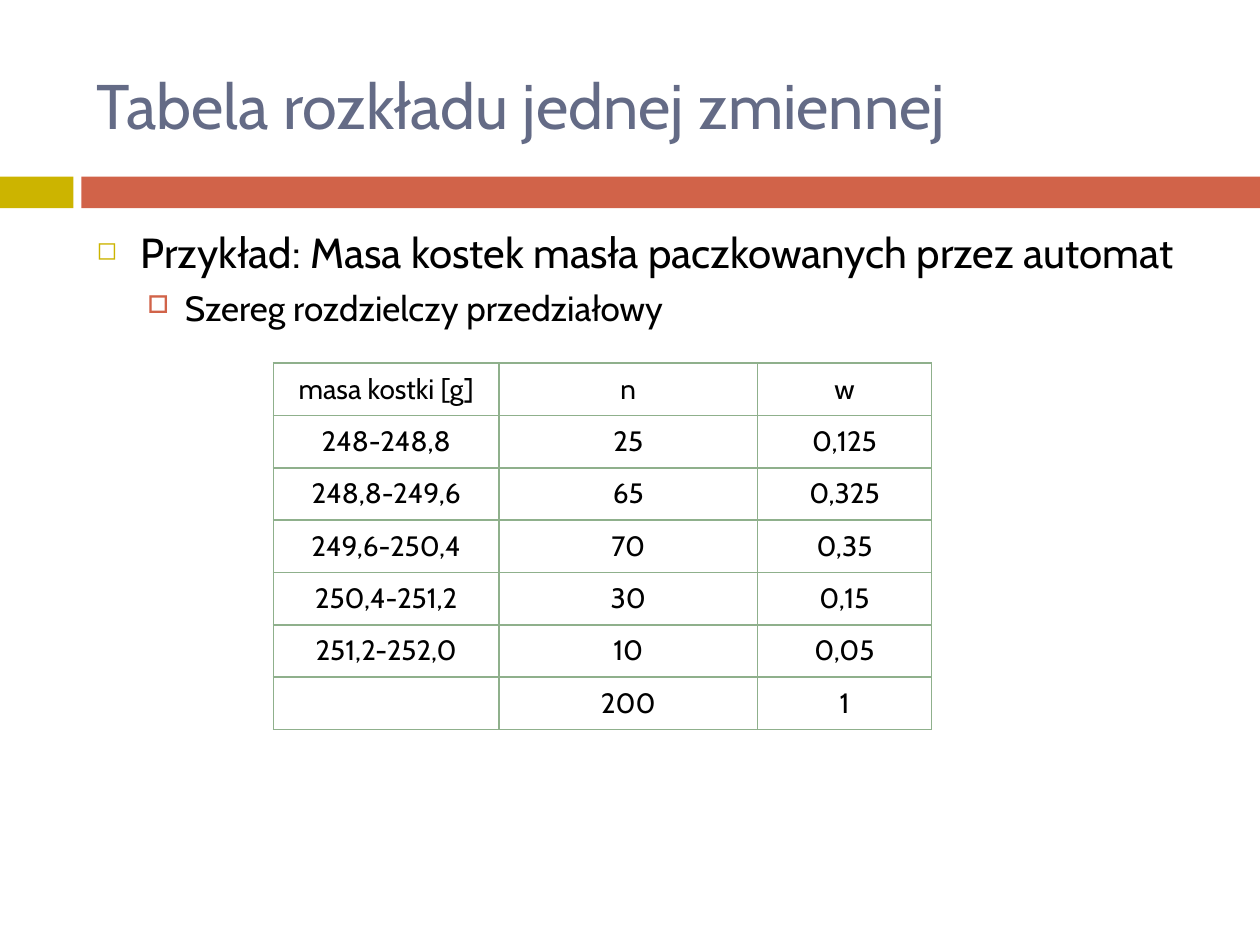
from dataclasses import dataclass

from lxml.etree import SubElement
from pptx import Presentation
from pptx.dml.color import RGBColor
from pptx.enum.shapes import MSO_SHAPE
from pptx.enum.text import MSO_ANCHOR, PP_ALIGN
from pptx.oxml.ns import qn
from pptx.util import Cm, Pt


@dataclass(frozen=True)
class Theme:
    font: str = "Cabin"
    title: str = "646B86"
    text: str = "000000"
    gold: str = "CCB400"
    red: str = "D16349"
    grid: str = "8FB08C"
    title_size: int = 36
    body_size: int = 24
    sub_size: int = 20
    cell_size: int = 16
    grid_width: int = 1


THEME = Theme()

TITLE = "Tabela rozkładu jednej zmiennej"
# text, size, bullet, bullet colour, bullet percent, left margin, hanging, space before
POINTS = [
    ("Przykład: Masa kostek masła paczkowanych przez automat",
     THEME.body_size, "◻", THEME.gold, 60, 0.89, 0.89, 7),
    ("Szereg rozdzielczy przedziałowy",
     THEME.sub_size, "□", THEME.red, 70, 1.78, 0.76, 5.5),
]
DISTRIBUTION = [
    ("masa kostki [g]", "n", "w"),
    ("248-248,8", "25", "0,125"),
    ("248,8-249,6", "65", "0,325"),
    ("249,6-250,4", "70", "0,35"),
    ("250,4-251,2", "30", "0,15"),
    ("251,2-252,0", "10", "0,05"),
    ("", "200", "1"),
]
COLUMN_WIDTHS = (4.55, 5.21, 3.51)


def style(paragraph, size, color):
    font = paragraph.font
    font.name, font.size = THEME.font, Pt(size)
    font.color.rgb = RGBColor.from_string(color)


def add_band(slide, left, top, width, height):
    """Gold block and red bar, parted by a narrow gap."""
    block, gap = 1.48, 0.16
    bar = block + gap
    for offset, length, color in ((0, block, THEME.gold), (bar, width - bar, THEME.red)):
        piece = slide.shapes.add_shape(
            MSO_SHAPE.RECTANGLE, Cm(left + offset), Cm(top), Cm(length), Cm(height))
        piece.shadow.inherit = False
        piece.fill.solid()
        piece.fill.fore_color.rgb = RGBColor.from_string(color)
        piece.line.fill.background()


def add_text_frame(slide, left, top, width, height):
    frame = slide.shapes.add_textbox(Cm(left), Cm(top), Cm(width), Cm(height)).text_frame
    frame.word_wrap = True
    return frame


def add_title(slide, left, top, width, height):
    frame = add_text_frame(slide, left, top, width, height)
    frame.vertical_anchor = MSO_ANCHOR.MIDDLE
    heading = frame.paragraphs[0]
    heading.text = TITLE
    style(heading, THEME.title_size, THEME.title)


def set_bullet(paragraph, char, color, percent, margin, hanging):
    properties = paragraph._p.get_or_add_pPr()
    properties.set("marL", str(Cm(margin)))
    properties.set("indent", str(-Cm(hanging)))
    bullet_color = SubElement(properties, qn("a:buClr"))
    SubElement(bullet_color, qn("a:srgbClr"), val=color)
    SubElement(properties, qn("a:buSzPct"), val=str(percent * 1000))
    SubElement(properties, qn("a:buChar"), char=char)


def add_points(slide, left, top, width, height):
    frame = add_text_frame(slide, left, top, width, height)
    for level, (text, size, char, color, percent, margin, hanging, before) in enumerate(POINTS):
        point = frame.add_paragraph() if level else frame.paragraphs[0]
        point.text, point.level = text, level
        point.space_before = Pt(before)
        set_bullet(point, char, color, percent, margin, hanging)
        style(point, size, THEME.text)


def set_borders(cell):
    properties = cell._tc.get_or_add_tcPr()
    for side in ("a:lnL", "a:lnR", "a:lnT", "a:lnB"):
        border = SubElement(properties, qn(side), w=str(Pt(THEME.grid_width)))
        fill = SubElement(border, qn("a:solidFill"))
        SubElement(fill, qn("a:srgbClr"), val=THEME.grid)


def add_distribution(slide, left, top, width, height):
    table = slide.shapes.add_table(
        len(DISTRIBUTION), len(COLUMN_WIDTHS),
        Cm(left), Cm(top), Cm(width), Cm(height)).table
    table.first_row = table.horz_banding = False
    for column, share in zip(table.columns, COLUMN_WIDTHS):
        column.width = Cm(width * share / sum(COLUMN_WIDTHS))
    for row, values in zip(table.rows, DISTRIBUTION):
        row.height = Cm(height / len(DISTRIBUTION))
        for cell, value in zip(row.cells, values):
            cell.margin_left = cell.margin_right = cell.margin_top = cell.margin_bottom = 0
            cell.vertical_anchor = MSO_ANCHOR.MIDDLE
            set_borders(cell)
            cell.fill.background()
            entry = cell.text_frame.paragraphs[0]
            entry.text = value
            entry.alignment = PP_ALIGN.CENTER
            style(entry, THEME.cell_size, THEME.text)


def main():
    deck = Presentation()
    deck.slide_width, deck.slide_height = Cm(25.4), Cm(19.05)
    slide = deck.slides.add_slide(deck.slide_layouts[6])
    add_band(slide, 0, 3.56, 25.4, 0.64)
    add_distribution(slide, 5.51, 7.32, 13.27, 7.39)
    add_title(slide, 1.7, 0.74, 22.66, 2.74)
    add_points(slide, 1.7, 4.45, 22.66, 12.5)
    deck.save("out.pptx")


if __name__ == "__main__":
    main()
